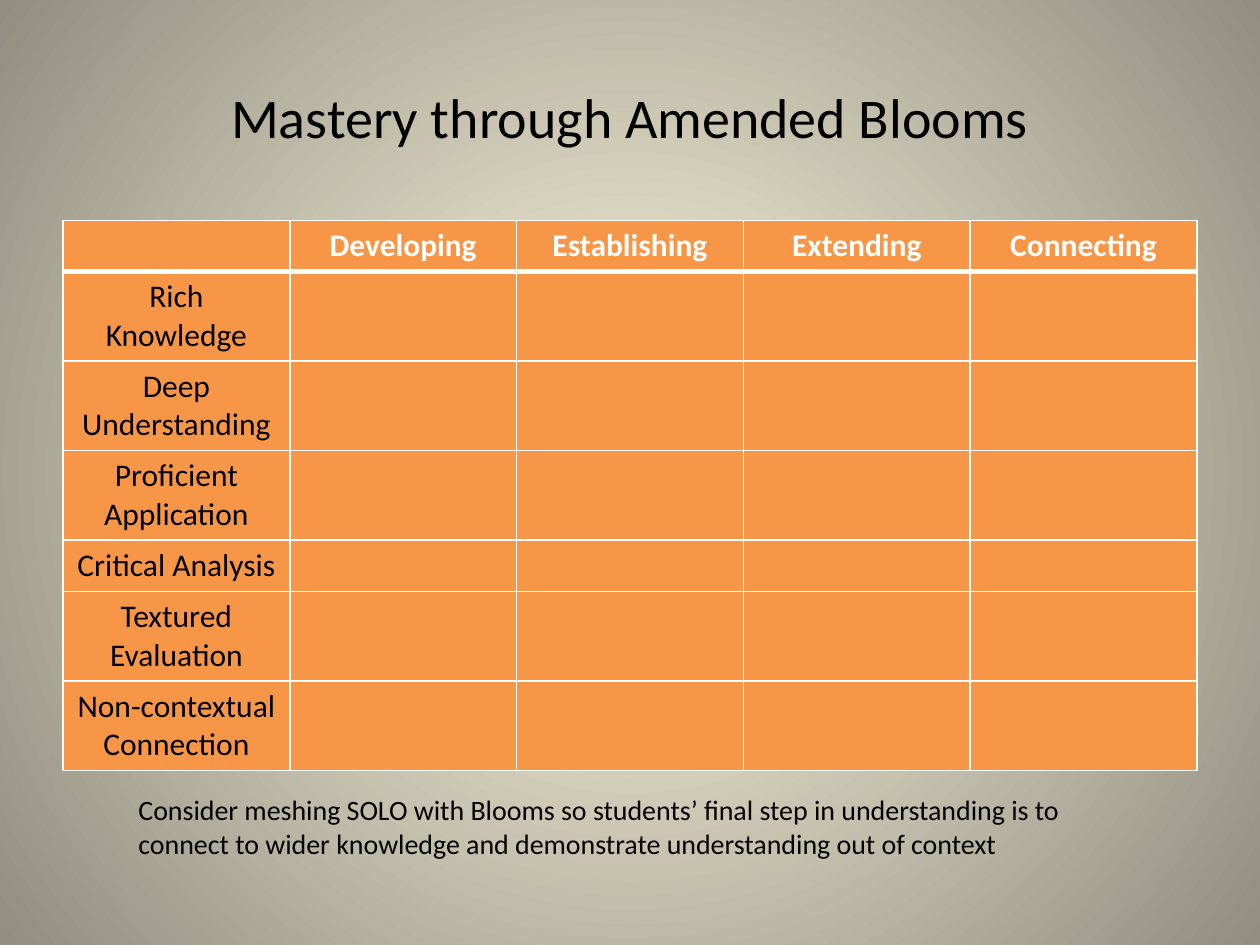
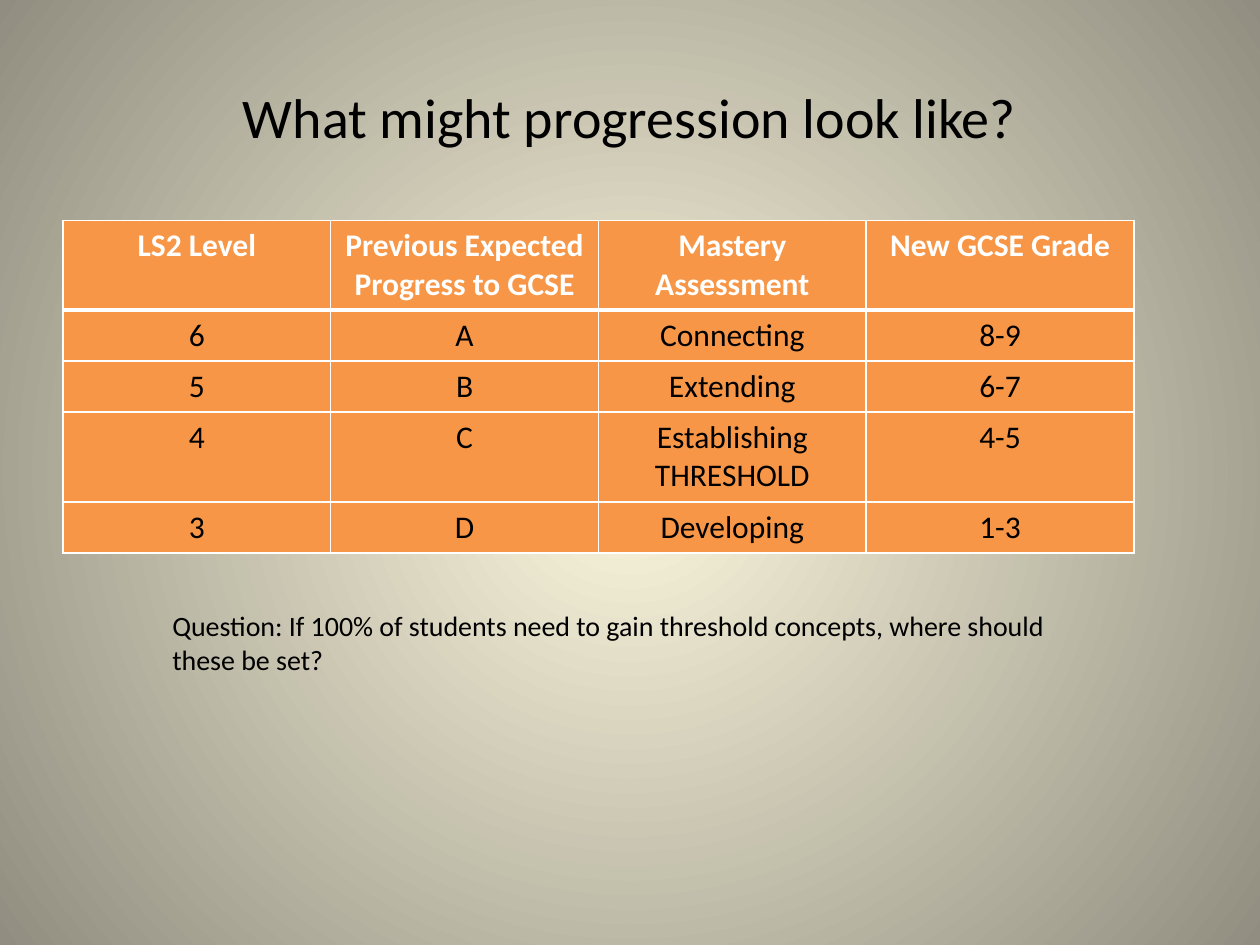
"""Build two slides on mastery assessment, each with a title, a grid and a prompt."""

from dataclasses import dataclass

from lxml.etree import SubElement
from pptx import Presentation
from pptx.dml.color import RGBColor
from pptx.enum.text import MSO_ANCHOR, MSO_AUTO_SIZE, PP_ALIGN
from pptx.oxml.ns import qn
from pptx.util import Pt


@dataclass(frozen=True)
class Theme:
    font: str = "Calibri"
    ink: str = "000000"
    line: str = "FFFFFF"
    cell: str = "F79646"
    glow: str = "FCF7DD"
    rim: str = "918E81"
    title_size: float = 32
    table_size: float = 18
    prompt_size: float = 16
    thin: float = 1
    thick: float = 3


@dataclass(frozen=True)
class Box:
    left: float
    top: float
    width: float
    height: float

    def lengths(self):
        return Pt(self.left), Pt(self.top), Pt(self.width), Pt(self.height)


@dataclass(frozen=True)
class GridSlide:
    title: str
    rows: list[list[str]]
    table_width: float
    prompt: str
    prompt_box: Box


THEME = Theme()
TITLE_BOX = Box(36, 21.6, 648, 90)
TABLE_LEFT, TABLE_TOP, ROW_HEIGHT = 36, 126, 29.2

STAGES = ["Developing", "Establishing", "Extending", "Connecting"]
SKILLS = [
    "Rich Knowledge",
    "Deep\nUnderstanding",
    "Proficient Application",
    "Critical Analysis",
    "Textured\nEvaluation",
    "Non-contextual\nConnection",
]

SLIDES = [
    GridSlide(
        "Mastery through Amended Blooms",
        [["", *STAGES]] + [[skill] + [""] * len(STAGES) for skill in SKILLS],
        648,
        "Consider meshing SOLO with Blooms so students’ final step in understanding "
        "is to connect to wider knowledge and demonstrate understanding out of context",
        Box(72, 449.3, 567.4, 46),
    ),
    GridSlide(
        "What might progression look like?",
        [
            ["LS2 Level", "Previous Expected Progress to GCSE", "Mastery Assessment", "New GCSE Grade"],
            ["6", "A", "Connecting", "8-9"],
            ["5", "B", "Extending", "6-7"],
            ["4", "C", "Establishing\nTHRESHOLD", "4-5"],
            ["3", "D", "Developing", "1-3"],
        ],
        612,
        "Question: If 100% of students need to gain threshold concepts, where should these be set?",
        Box(91.4, 344.2, 533.5, 46),
    ),
]


def write(frame, text: str, size: float, color: str, align, bold: bool = False) -> None:
    for index, line in enumerate(text.split("\n")):
        paragraph = frame.add_paragraph() if index else frame.paragraphs[0]
        paragraph.alignment = align
        run = paragraph.add_run()
        run.text = line
        run.font.name = THEME.font
        run.font.size = Pt(size)
        run.font.bold = bold
        run.font.color.rgb = RGBColor.from_string(color)


def set_background(master) -> None:
    fill = master.background.fill
    fill.gradient()
    for stop, color in zip(fill.gradient_stops, (THEME.glow, THEME.rim)):
        stop.color.rgb = RGBColor.from_string(color)
    gradient = master.element.find(".//" + qn("a:gradFill"))
    gradient.remove(gradient.find(qn("a:lin")))
    circle = SubElement(gradient, qn("a:path"), path="circle")
    SubElement(circle, qn("a:fillToRect"), {side: "50000" for side in "ltrb"})


def set_borders(cell, top: float, bottom: float) -> None:
    properties = cell._tc.get_or_add_tcPr()
    widths = {"L": THEME.thin, "R": THEME.thin, "T": top, "B": bottom}
    for side, width in widths.items():
        border = SubElement(properties, qn(f"a:ln{side}"), w=str(Pt(width)))
        SubElement(SubElement(border, qn("a:solidFill")), qn("a:srgbClr"), val=THEME.line)


def add_grid(slide, rows: list[list[str]], width: float) -> None:
    box = Box(TABLE_LEFT, TABLE_TOP, width, ROW_HEIGHT * len(rows))
    table = slide.shapes.add_table(len(rows), len(rows[0]), *box.lengths()).table
    for row_index, row in enumerate(rows):
        is_header = row_index == 0
        for column_index, text in enumerate(row):
            cell = table.cell(row_index, column_index)
            top = THEME.thick if row_index == 1 else THEME.thin
            set_borders(cell, top, THEME.thick if is_header else THEME.thin)
            cell.fill.solid()
            cell.fill.fore_color.rgb = RGBColor.from_string(THEME.cell)
            if text:
                color = THEME.line if is_header else THEME.ink
                write(cell.text_frame, text, THEME.table_size, color, PP_ALIGN.CENTER, is_header)


def add_prompt(slide, text: str, box: Box) -> None:
    frame = slide.shapes.add_textbox(*box.lengths()).text_frame
    frame.word_wrap = True
    frame.auto_size = MSO_AUTO_SIZE.SHAPE_TO_FIT_TEXT
    write(frame, text, THEME.prompt_size, THEME.ink, PP_ALIGN.LEFT)


def add_slide(deck, content: GridSlide) -> None:
    slide = deck.slides.add_slide(deck.slide_layouts.get_by_name("Title Only"))
    title = slide.shapes.title
    title.left, title.top, title.width, title.height = TITLE_BOX.lengths()
    title.text_frame.vertical_anchor = MSO_ANCHOR.MIDDLE
    write(title.text_frame, content.title, THEME.title_size, THEME.ink, PP_ALIGN.CENTER)
    add_grid(slide, content.rows, content.table_width)
    add_prompt(slide, content.prompt, content.prompt_box)


def main() -> None:
    deck = Presentation()
    deck.slide_width, deck.slide_height = Pt(720), Pt(540)
    set_background(deck.slide_master)
    for content in SLIDES:
        add_slide(deck, content)
    deck.save("out.pptx")


if __name__ == "__main__":
    main()
